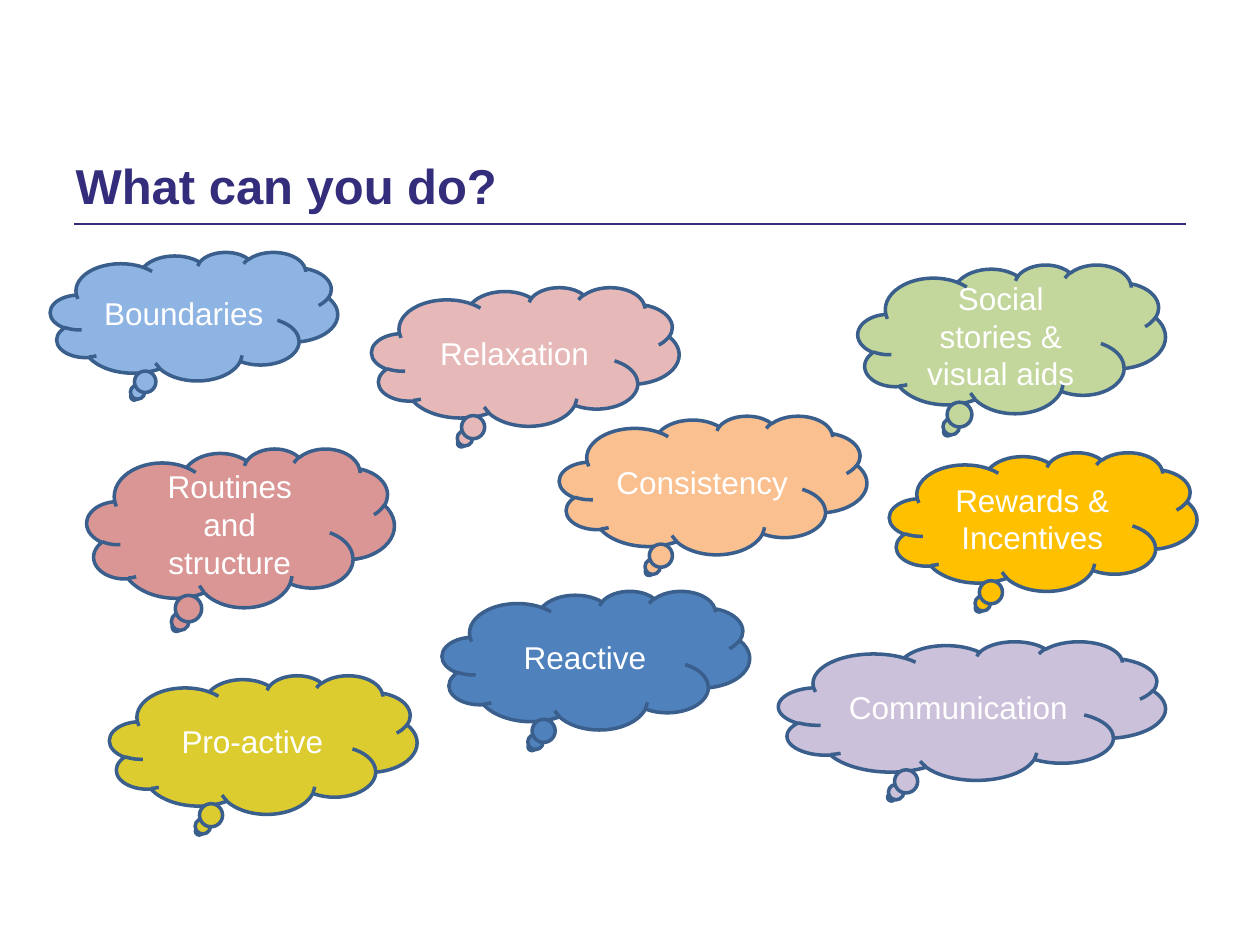
import pptx
import pptx.util
import pptx.dml.color
import pptx.enum.shapes
import pptx.enum.text
import pptx.oxml.ns
import lxml.etree

# The slide is a grid of 100 columns by 75 rows of square cells
COLS, ROWS = 100, 75
CELL = pptx.util.Inches(0.1)
NAVY, EDGE, WHITE = "332D7C", "3A5F8C", "FFFFFF"
WIDE, HIGH = 24.4, 11  # usual cloud size

# text, fill, column, row, width, height
CLOUDS = [
    ("Boundaries", "8EB4E3", 4, 20, 22.8, 10.2),
    ("Routines and structure", "D99694", 6.9, 35.6, WIDE, 12.6),
    ("Consistency", "FAC090", 44.4, 33, WIDE, HIGH),
    ("Rewards &\nIncentives", "FFC000", 70.6, 35.9, WIDE, HIGH),
    ("Social stories & visual aids", "C3D69B", 68.1, 21, WIDE, 11.8),
    ("Communication", "CCC1DA", 61.8, 50.9, 30.7, HIGH),
    ("Relaxation", "E6B9B8", 29.5, 22.8, WIDE, HIGH),
    ("Pro-active", "DCCC30", 8.7, 53.6, WIDE, HIGH),
    ("Reactive", "4F81BD", 35.1, 46.9, WIDE, HIGH),
]


def grid(*cells):
    return [int(n * CELL) for n in cells]


def paint(color, code):
    color.rgb = pptx.dml.color.RGBColor.from_string(code)


def style(frame, size, code, align, bold=False):
    frame.word_wrap = True
    frame.vertical_anchor = pptx.enum.text.MSO_ANCHOR.MIDDLE
    for para in frame.paragraphs:
        para.alignment = align
        para.font.name = "Arial"
        para.font.size = pptx.util.Pt(size)
        para.font.bold = bold
        paint(para.font.color, code)


def title(slide, text):
    box = slide.shapes.title
    box.left, box.top, box.width, box.height = grid(5, 11.5, 90, 6.3)
    box.text_frame.text = text
    style(box.text_frame, 28, NAVY, pptx.enum.text.PP_ALIGN.LEFT, True)


def rule(slide, left, right, row):
    kind = pptx.enum.shapes.MSO_CONNECTOR.STRAIGHT
    line = slide.shapes.add_connector(kind, *grid(left, row, right, row))
    paint(line.line.color, NAVY)
    line.line.width = pptx.util.Pt(1)
    # An empty effect list turns the shadow off
    lxml.etree.SubElement(line._element.spPr, pptx.oxml.ns.qn("a:effectLst"))


def cloud(slide, text, fill, *area):
    kind = pptx.enum.shapes.MSO_SHAPE.CLOUD_CALLOUT
    shape = slide.shapes.add_shape(kind, *grid(*area))
    shape.shadow.inherit = False
    shape.fill.solid()
    paint(shape.fill.fore_color, fill)
    paint(shape.line.color, EDGE)
    shape.line.width = pptx.util.Pt(2)
    shape.text_frame.text = text
    style(shape.text_frame, 18, WHITE, pptx.enum.text.PP_ALIGN.CENTER)


def main():
    deck = pptx.Presentation()
    deck.slide_width, deck.slide_height = grid(COLS, ROWS)
    slide = deck.slides.add_slide(deck.slide_layouts.get_by_name("Title Only"))

    # Heading with its rule
    rule(slide, 5.9, 94.1, 17.8)
    title(slide, "What can you do?")

    # Thought clouds
    for item in CLOUDS:
        cloud(slide, *item)

    deck.save("out.pptx")


if __name__ == "__main__":
    main()
